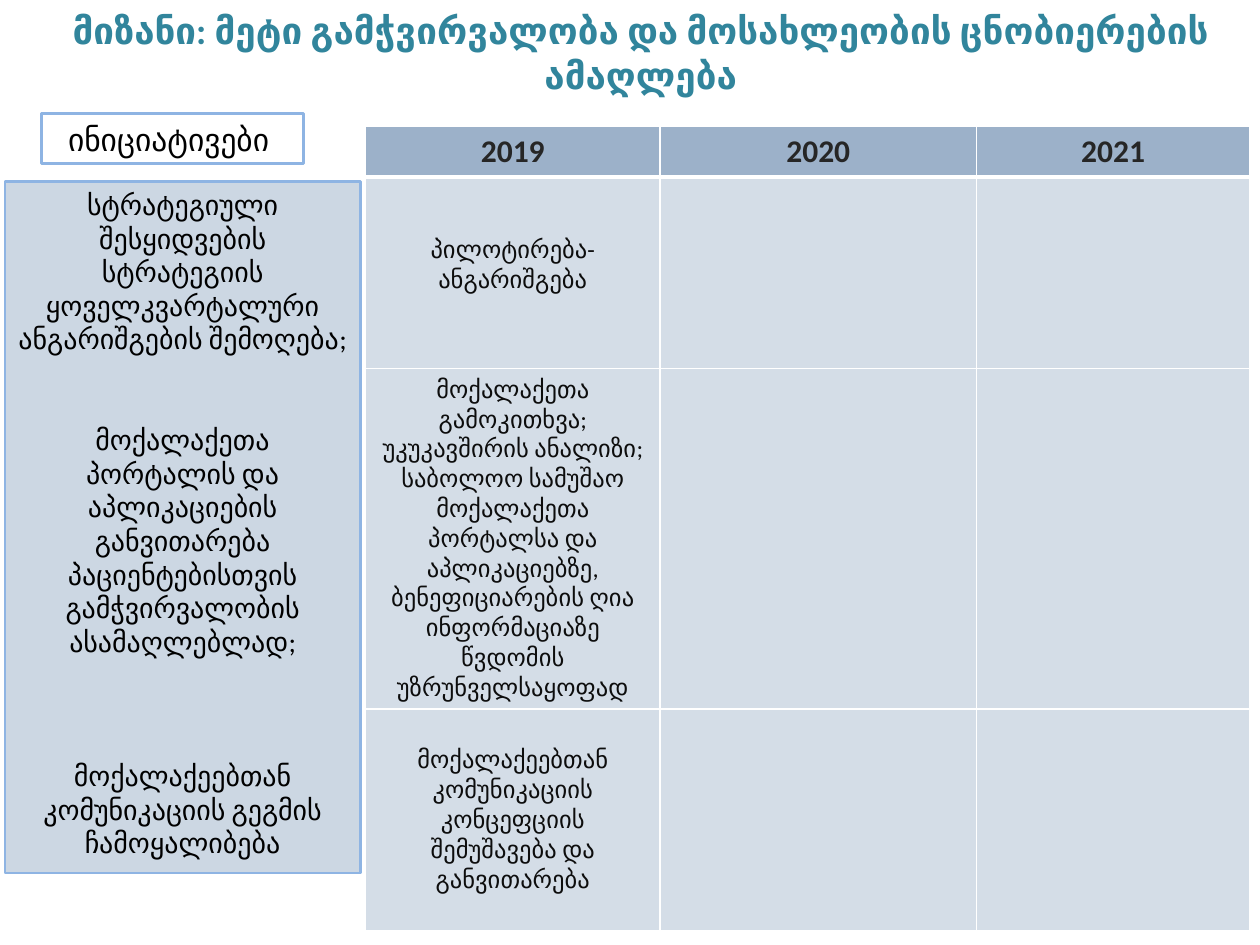
import lxml.etree
import pptx
import pptx.dml.color
import pptx.enum.shapes
import pptx.enum.text
import pptx.oxml.ns
import pptx.util

Inches, Pt = pptx.util.Inches, pptx.util.Pt
RGB = pptx.dml.color.RGBColor
ALIGN, ANCHOR = pptx.enum.text.PP_ALIGN, pptx.enum.text.MSO_ANCHOR
qn = pptx.oxml.ns.qn

TEAL = RGB(0x31, 0x85, 0x9C)
NAVY = RGB(0x37, 0x60, 0x92)
SKY = RGB(0x8E, 0xB4, 0xE3)
BLACK = RGB(0, 0, 0)
DARK = RGB(0x26, 0x26, 0x26)
INK = RGB(0x0D, 0x0D, 0x0D)
WHITE = RGB(0xFF, 0xFF, 0xFF)


class Deck:
    font = "Calibri"

    def __init__(self, wide, high):
        self.prs = pptx.Presentation()
        self.prs.slide_width, self.prs.slide_height = Inches(wide), Inches(high)
        self.slide = self.prs.slides.add_slide(self.prs.slide_layouts[5])

    def words(self, frame, lines, size, color, bold=False, align=ALIGN.CENTER, gaps=()):
        """One paragraph per line; gaps are the points above each paragraph."""
        look = {"name": self.font, "size": Pt(size), "bold": bold}
        for i, line in enumerate(lines):
            para = frame.paragraphs[0] if i == 0 else frame.add_paragraph()
            para.alignment = align
            if gaps:
                para.space_before = Pt(gaps[i])
            run = para.add_run()
            run.text = line
            for key, value in look.items():
                setattr(run.font, key, value)
            run.font.color.rgb = color

    def tint(self, fill, node, alpha):
        fill.solid()
        fill.fore_color.rgb = NAVY
        clr = node.find(qn("a:solidFill")).find(qn("a:srgbClr"))
        lxml.etree.SubElement(clr, qn("a:alpha"), val=str(alpha * 1000))

    def title(self, box, text):
        shape = self.slide.shapes.title
        shape.left, shape.top, shape.width, shape.height = map(Inches, box)
        shape.text_frame.word_wrap = True
        shape.text_frame.vertical_anchor = ANCHOR.MIDDLE
        self.words(shape.text_frame, [text], 21, TEAL, True)

    def panel(self, box, lines, size, alpha=0, inset=0.1, **style):
        shape = self.slide.shapes.add_shape(
            pptx.enum.shapes.MSO_SHAPE.RECTANGLE, *map(Inches, box))
        shape.shadow.inherit = False
        shape.line.color.rgb, shape.line.width = SKY, Pt(1.5)
        if alpha:
            self.tint(shape.fill, shape._element.spPr, alpha)
        else:
            shape.fill.background()
        frame = shape.text_frame
        frame.word_wrap = True
        frame.vertical_anchor = ANCHOR.TOP
        frame.margin_left = Inches(inset)
        self.words(frame, lines, size, BLACK, **style)

    def edge(self, cell, base):
        """White rules on all four sides of a cell."""
        props = cell._tc.get_or_add_tcPr()
        for i, (side, width) in enumerate(zip("LRTB", (1, 1, 1, base))):
            line = lxml.etree.Element(qn("a:ln" + side), w=str(int(Pt(width))))
            fill = lxml.etree.SubElement(line, qn("a:solidFill"))
            lxml.etree.SubElement(fill, qn("a:srgbClr"), val=str(WHITE))
            props.insert(i, line)

    def table(self, left, top, cols, rows, heads, notes):
        grid = self.slide.shapes.add_table(
            len(rows), len(cols), Inches(left), Inches(top),
            Inches(sum(cols)), Inches(sum(rows))).table
        grid.horz_banding = False
        for col, wide in zip(grid.columns, cols):
            col.width = Inches(wide)
        for row, high in zip(grid.rows, rows):
            row.height = Inches(high)
        for r in range(len(rows)):
            for c in range(len(cols)):
                cell = grid.cell(r, c)
                self.tint(cell.fill, cell._tc.get_or_add_tcPr(), 21 if r else 49)
                self.edge(cell, 1 if r else 3)
        for c, head in enumerate(heads):
            self.words(grid.cell(0, c).text_frame, [head], 18, DARK, True)
        for r, (inset, lines) in enumerate(notes, 1):
            cell = grid.cell(r, 0)
            cell.margin_top = Inches(inset)
            self.words(cell.text_frame, lines, 14, INK)


def main():
    deck = Deck(10, 7.5)
    deck.title((0.17, 0, 9.83, 0.83),
               "მიზანი: მეტი გამჭვირვალობა და მოსახლეობის ცნობიერების ამაღლება")

    # Initiatives: label and list
    deck.panel((0.33, 0.9, 2.08, 0.4), ["ინიციატივები"], 18,
               inset=0.21, align=ALIGN.LEFT)
    deck.panel((0.04, 1.44, 2.82, 5.49), [
        "სტრატეგიული შესყიდვების სტრატეგიის ყოველკვარტალური ანგარიშგების შემოღება;",
        "მოქალაქეთა პორტალის და აპლიკაციების განვითარება პაციენტებისთვის "
        "გამჭვირვალობის ასამაღლებლად;",
        "მოქალაქეებთან კომუნიკაციის გეგმის ჩამოყალიბება",
    ], 16, alpha=25, gaps=(0, 38.4, 57.6))

    # Yearly plan: top inset and text of each first cell
    deck.table(2.9, 1, (2.34, 2.51, 2.17), (0.38, 1.52, 2.5, 1.76),
               ("2019", "2020", "2021"), (
        (0.46, ["პილოტირება- ანგარიშგება"]),
        (0.05, ["მოქალაქეთა გამოკითხვა; უკუკავშირის ანალიზი; საბოლოო სამუშაო "
                "მოქალაქეთა პორტალსა და აპლიკაციებზე, ბენეფიციარების ღია ინფორმაციაზე",
                "წვდომის უზრუნველსაყოფად"]),
        (0.29, ["მოქალაქეებთან კომუნიკაციის კონცეფციის შემუშავება და განვითარება"]),
    ))
    deck.prs.save("out.pptx")


if __name__ == "__main__":
    main()
